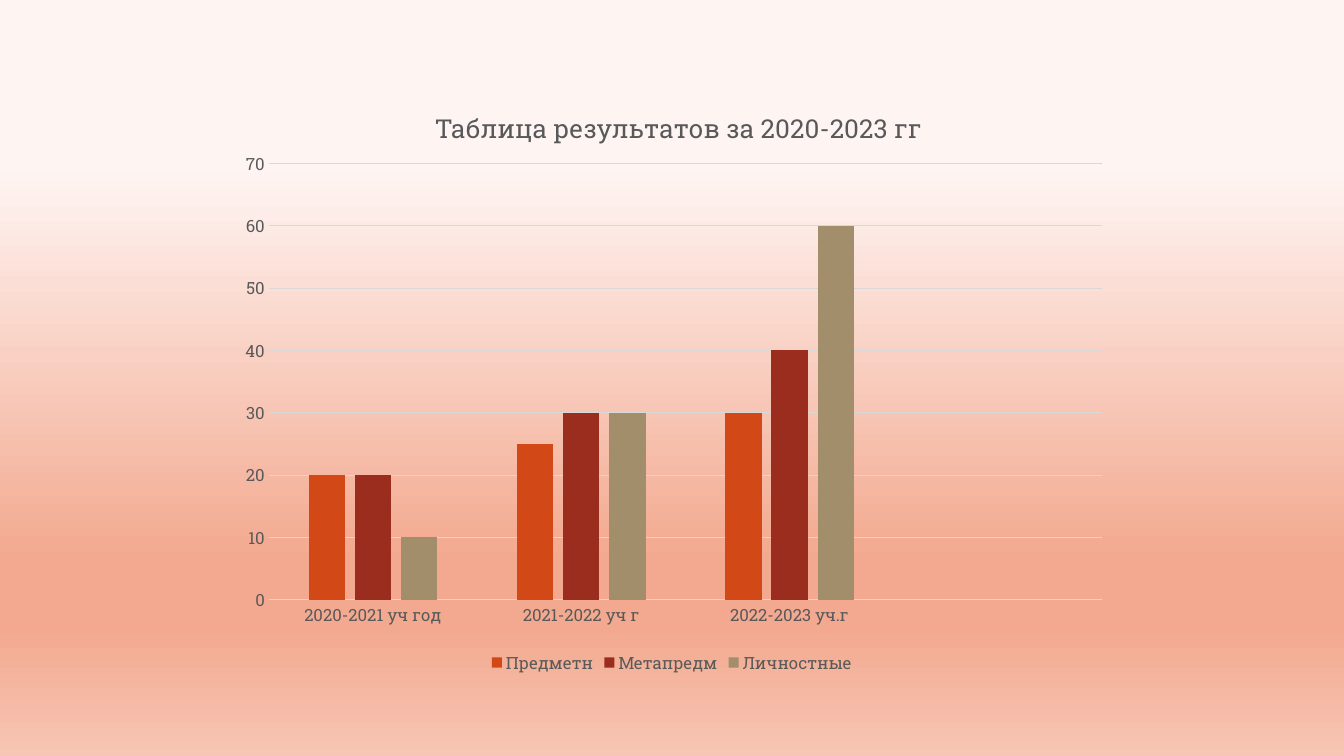
from dataclasses import dataclass

from lxml.etree import SubElement
from pptx import Presentation
from pptx.chart.data import CategoryChartData as ChartData
from pptx.dml.color import RGBColor as RGB
from pptx.enum.chart import (
    XL_CHART_TYPE as ChartType,
    XL_LEGEND_POSITION as LegendPos,
    XL_TICK_MARK as Tick,
)
from pptx.oxml import parse_xml
from pptx.oxml.ns import nsdecls, qn
from pptx.util import Pt


@dataclass(frozen=True)
class Theme:
    font: str = "Roboto Slab"
    text: str = "595959"
    line: str = "D9D9D9"
    series: tuple = ("D34817", "9B2D1F", "A28E6A")
    background: tuple = ((22, "FEF5F3"), (74, "F3A98F"), (83, "F3A98F"), (100, "F7C6B4"))
    title_size: float = 18.6
    label_size: float = 12
    line_width: float = 0.75


class SlideBuilder:
    def __init__(self, s, theme):
        self.s = s
        self.theme = theme

    def background(self):
        fill = self.s.background.fill
        fill.gradient()
        fill.gradient_angle = 270
        stops = self.s.element.find(".//" + qn("a:gsLst"))
        for stop in list(stops):
            stops.remove(stop)
        for pos, color in self.theme.background:
            stop = SubElement(stops, qn("a:gs"), pos=str(pos * 1000))
            SubElement(stop, qn("a:srgbClr"), val=color)

    def style_font(self, font, size):
        font.name = self.theme.font
        font.size = Pt(size)
        font.bold = False
        font.color.rgb = RGB.from_string(self.theme.text)

    def style_line(self, line):
        line.color.rgb = RGB.from_string(self.theme.line)
        line.width = Pt(self.theme.line_width)

    def place(self, element, index, **fractions):
        """Fix a chart part at fractions of the chart's size."""
        for old in element.findall(qn("c:layout")):
            element.remove(old)
        layout = parse_xml(f"<c:layout {nsdecls('c')}><c:manualLayout/></c:layout>")
        manual = layout[0]
        if "w" in fractions:
            SubElement(manual, qn("c:layoutTarget"), val="inner")
        for axis in "xy":
            SubElement(manual, qn(f"c:{axis}Mode"), val="edge")
        for name, value in fractions.items():
            SubElement(manual, qn(f"c:{name}"), val=str(value))
        element.insert(index, layout)

    def column_chart(self, title, categories, series, left, top, width, height):
        data = ChartData()
        data.categories = categories
        for name, values in series.items():
            data.add_series(name, values)
        chart = self.s.shapes.add_chart(
            ChartType.COLUMN_CLUSTERED, Pt(left), Pt(top), Pt(width), Pt(height), data
        ).chart
        self.style_font(chart.font, self.theme.label_size)
        self.chart_title(chart, title)
        self.columns(chart)
        self.axes(chart)
        self.legend(chart)
        return chart

    def chart_title(self, chart, text):
        chart.has_title = True
        p = chart.chart_title.text_frame.paragraphs[0]
        r = p.add_run()
        r.text = text
        self.style_font(r.font, self.theme.title_size)

    def columns(self, chart):
        plot = chart.plots[0]
        plot.vary_by_categories = False
        plot.gap_width = 219
        plot.overlap = -27
        for series, color in zip(plot.series, self.theme.series):
            series.format.fill.solid()
            series.format.fill.fore_color.rgb = RGB.from_string(color)

    def axes(self, chart):
        for axis in (chart.category_axis, chart.value_axis):
            axis.major_tick_mark = axis.minor_tick_mark = Tick.NONE
            self.style_font(axis.tick_labels.font, self.theme.label_size)
        self.style_line(chart.category_axis.format.line)
        values = chart.value_axis
        values.minimum_scale, values.maximum_scale, values.major_unit = 0, 70, 10
        values.format.line.fill.background()
        values.has_major_gridlines = True
        self.style_line(values.major_gridlines.format.line)

    def legend(self, chart):
        chart.has_legend = True
        chart.legend.position = LegendPos.BOTTOM
        chart.legend.include_in_layout = False
        self.style_font(chart.legend.font, self.theme.label_size)


def main():
    prs = Presentation()
    prs.slide_width, prs.slide_height = Pt(960), Pt(540)
    slide = SlideBuilder(prs.slides.add_slide(prs.slide_layouts[6]), Theme())
    slide.background()
    chart = slide.column_chart(
        "Таблица результатов за 2020-2023 гг",
        ["2020-2021 уч год", "2021-2022 уч г", "2022-2023 уч.г", ""],
        {
            "Предметн": (20, 25, 30, None),
            "Метапредм": (20, 30, 40, None),
            "Личностные": (10, 30, 60, None),
        },
        left=160, top=57, width=640, height=427,
    )
    slide.place(chart.chart_title.element if hasattr(chart.chart_title, "element")
                else chart.element.find(".//" + qn("c:title")), 1, x=0.23, y=0.04)
    slide.place(chart.element.find(".//" + qn("c:plotArea")), 0,
                x=0.05, y=0.14, w=0.93, h=0.73)
    prs.save("out.pptx")


if __name__ == "__main__":
    main()
